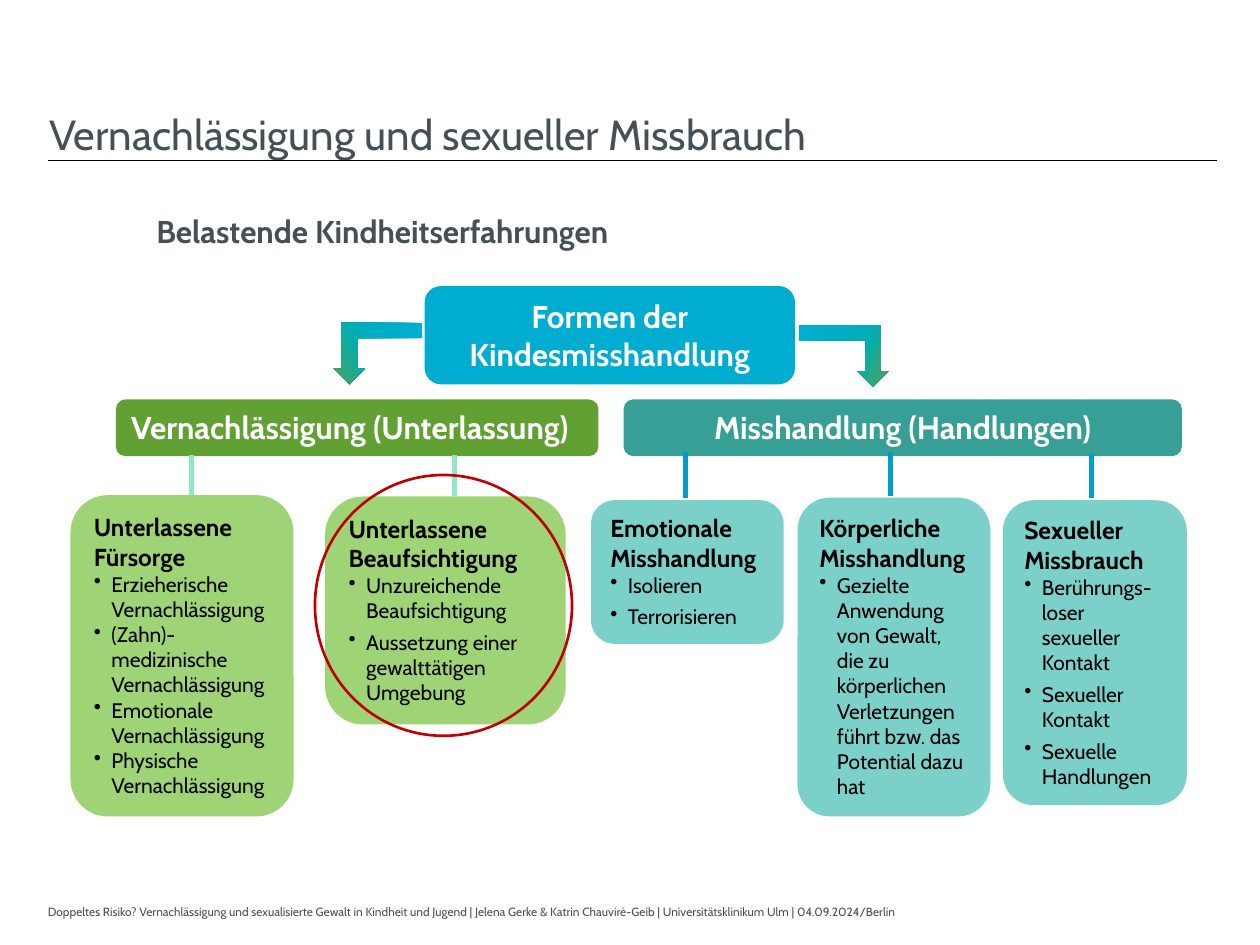
from typing import NamedTuple

import pptx
import pptx.dml.color
import pptx.enum.shapes
import pptx.enum.text
import pptx.oxml
import pptx.oxml.ns
import pptx.util

Inches, Pt = pptx.util.Inches, pptx.util.Pt
SHAPE = pptx.enum.shapes.MSO_SHAPE
ALIGN = pptx.enum.text.PP_ALIGN
ANCHOR = pptx.enum.text.MSO_ANCHOR
FIT = pptx.enum.text.MSO_AUTO_SIZE
NS = pptx.oxml.ns.nsdecls("a")
FONT, GREY, WHITE, BLACK = "Cabin", "445055", "FFFFFF", "000000"
GREEN, TEAL, MINT, BLUE = "9ED476", "7BD1CA", "93E8C4", "009DCA"
ARROW_STOPS = [(0, "00ADD4"), (39, "00ADC3"), (62, "00ADB1"), (86, "31A77C"), (100, "61A047")]


class Box(NamedTuple):
    left: float
    top: float
    width: float
    height: float


class Header(NamedTuple):
    box: Box
    text: str
    fill: str
    align: ALIGN


class Card(NamedTuple):
    box: Box
    fill: str
    heading: str
    items: list[str]
    gap: float  # points between the items


class Line(NamedTuple):
    x1: float
    y1: float
    x2: float
    y2: float
    color: str
    width: float


HEADERS = [
    Header(Box(3.37, 2.27, 2.94, 0.78), "Formen der Kindesmisshandlung", "00ADD1", ALIGN.CENTER),
    Header(Box(0.92, 3.17, 3.83, 0.45), "Vernachlässigung (Unterlassung)", "61A032", ALIGN.LEFT),
    Header(Box(4.95, 3.17, 4.43, 0.45), "Misshandlung (Handlungen)", "379F96", ALIGN.CENTER),
]
CARDS = [
    Card(Box(0.56, 3.93, 1.77, 2.55), GREEN, "Unterlassene Fürsorge",
         ["Erzieherische Vernachlässigung", "(Zahn)-medizinische Vernachlässigung",
          "Emotionale Vernachlässigung", "Physische Vernachlässigung"], 0),
    Card(Box(2.58, 3.94, 1.91, 1.81), GREEN, "Unterlassene Beaufsichtigung",
         ["Unzureichende Beaufsichtigung", "Aussetzung einer gewalttätigen Umgebung"], 3.6),
    Card(Box(4.69, 3.97, 1.53, 1.14), TEAL, "Emotionale Misshandlung",
         ["Isolieren", "Terrorisieren"], 3.6),
    Card(Box(6.33, 3.95, 1.53, 2.53), TEAL, "Körperliche Misshandlung",
         ["Gezielte Anwendung von Gewalt, die zu körperlichen Verletzungen führt "
          "bzw. das Potential dazu hat"], 0),
    Card(Box(7.96, 3.97, 1.46, 2.42), TEAL, "Sexueller Missbrauch",
         ["Berührungs-loser sexueller Kontakt", "Sexueller Kontakt", "Sexuelle Handlungen"], 3.6),
]
LINES = [
    Line(0.38, 1.27, 9.66, 1.27, BLACK, 0.5),
    Line(1.52, 3.61, 1.52, 3.93, MINT, 3),
    Line(3.61, 3.61, 3.61, 3.94, MINT, 3),
    Line(5.44, 3.59, 5.44, 3.95, BLUE, 3),
    Line(7.07, 3.59, 7.07, 3.94, BLUE, 3),
    Line(8.66, 3.6, 8.66, 3.95, BLUE, 3),
]


def rgb(color: str):
    return pptx.dml.color.RGBColor.from_string(color)


def inches(box: Box) -> list:
    return [Inches(v) for v in box]


def write(p, text: str, size: float, color: str, bold=False, align=ALIGN.LEFT) -> None:
    p.text = text
    p.alignment = align
    for r in p.runs:
        r.font.name, r.font.size, r.font.bold = FONT, Pt(size), bold
        r.font.color.rgb = rgb(color)


def set_bullet(p, indent: float, bullet: str) -> None:
    pPr = p._p.get_or_add_pPr()
    pPr.set("marL", str(Inches(indent)))
    pPr.set("indent", str(-Inches(indent)))
    pPr.append(pptx.oxml.parse_xml(bullet))


def set_frame(tf, insets: tuple, anchor=ANCHOR.TOP, fit=FIT.NONE) -> None:
    tf.word_wrap, tf.vertical_anchor, tf.auto_size = True, anchor, fit
    tf.margin_left, tf.margin_top, tf.margin_right, tf.margin_bottom = map(Inches, insets)


def add_shape(s, kind, box: Box):
    sp = s.shapes.add_shape(kind, *inches(box))
    sp.shadow.inherit = False
    sp.line.fill.background()
    return sp


def add_panel(s, box: Box, fill: str):
    sp = add_shape(s, SHAPE.ROUNDED_RECTANGLE, box)
    sp.fill.solid()
    sp.fill.fore_color.rgb = rgb(fill)
    set_frame(sp.text_frame, (0.1, 0.05, 0.1, 0.05), fit=FIT.SHAPE_TO_FIT_TEXT)
    return sp.text_frame


def add_card(s, card: Card) -> None:
    tf = add_panel(s, card.box, card.fill)
    write(tf.paragraphs[0], card.heading, 14, BLACK, True)
    for i, item in enumerate(card.items):
        p = tf.add_paragraph()
        set_bullet(p, 0.14, f'<a:buChar {NS} char="•"/>')
        write(p, item, 12, BLACK)
        p.space_before = Pt(card.gap if i else 0)


def add_arrow(s, box: Box, flip: bool) -> None:
    sp = add_shape(s, SHAPE.BENT_UP_ARROW, box)
    sp.rotation = 180
    if flip:
        sp._element.spPr.xfrm.set("flipH", "1")
    sp.fill.gradient()
    sp.fill.gradient_angle = 30
    stops = sp._element.spPr.find(".//" + pptx.oxml.ns.qn("a:gsLst"))
    for old in list(stops):
        stops.remove(old)
    for pos, color in ARROW_STOPS:
        stops.append(pptx.oxml.parse_xml(
            f'<a:gs {NS} pos="{pos * 1000}"><a:srgbClr val="{color}"/></a:gs>'))


def add_line(s, line: Line) -> None:
    ends = [Inches(v) for v in line[:4]]
    cxn = s.shapes.add_connector(pptx.enum.shapes.MSO_CONNECTOR.STRAIGHT, *ends)
    cxn.line.color.rgb = rgb(line.color)
    cxn.line.width = Pt(line.width)
    cxn._element.spPr.append(pptx.oxml.parse_xml(f"<a:effectLst {NS}/>"))


def fill_placeholder(sp, box: Box, text: str, size: float, bold: bool) -> None:
    sp.left, sp.top, sp.width, sp.height = inches(box)
    set_frame(sp.text_frame, (0, 0.06, 0, 0.04))
    p = sp.text_frame.paragraphs[0]
    set_bullet(p, 0, f"<a:buNone {NS}/>")
    write(p, text, size, GREY, bold)
    p.space_before = Pt(0)


def main() -> None:
    prs = pptx.Presentation()
    prs.slide_width, prs.slide_height = Inches(10), Inches(7.5)
    s = prs.slides.add_slide(prs.slide_layouts[1])

    # Title and subtitle
    fill_placeholder(s.shapes.title, Box(0.39, 0.8, 7.09, 0.48),
                     "Vernachlässigung und sexueller Missbrauch", 24, False)
    fill_placeholder(s.placeholders[1], Box(1.24, 1.62, 7.26, 0.66),
                     "Belastende Kindheitserfahrungen", 18, True)

    # Footer
    tf = s.shapes.add_textbox(*inches(Box(0.38, 7.11, 6.94, 0.25))).text_frame
    set_frame(tf, (0, 0.05, 0.1, 0.05), ANCHOR.MIDDLE)
    write(tf.paragraphs[0],
          "Doppeltes Risiko? Vernachlässigung und sexualisierte Gewalt in Kindheit und Jugend | "
          "Jelena Gerke & Katrin Chauviré-Geib | Universitätsklinikum Ulm | 04.09.2024/Berlin",
          6.8, GREY)

    # Hierarchy: headers, arrows, connecting lines, cards
    for header in HEADERS:
        tf = add_panel(s, header.box, header.fill)
        write(tf.paragraphs[0], header.text, 18, WHITE, True, header.align)
    add_arrow(s, Box(2.65, 2.56, 0.7, 0.49), False)
    add_arrow(s, Box(6.34, 2.58, 0.71, 0.49), True)
    for line in LINES:
        add_line(s, line)
    for card in CARDS:
        add_card(s, card)

    # Highlight ring
    ring = add_shape(s, SHAPE.OVAL, Box(2.5, 3.77, 2.04, 2.07))
    ring.fill.background()
    ring.line.color.rgb = rgb("C00000")
    ring.line.width = Pt(1.5)

    prs.save("out.pptx")


if __name__ == "__main__":
    main()
